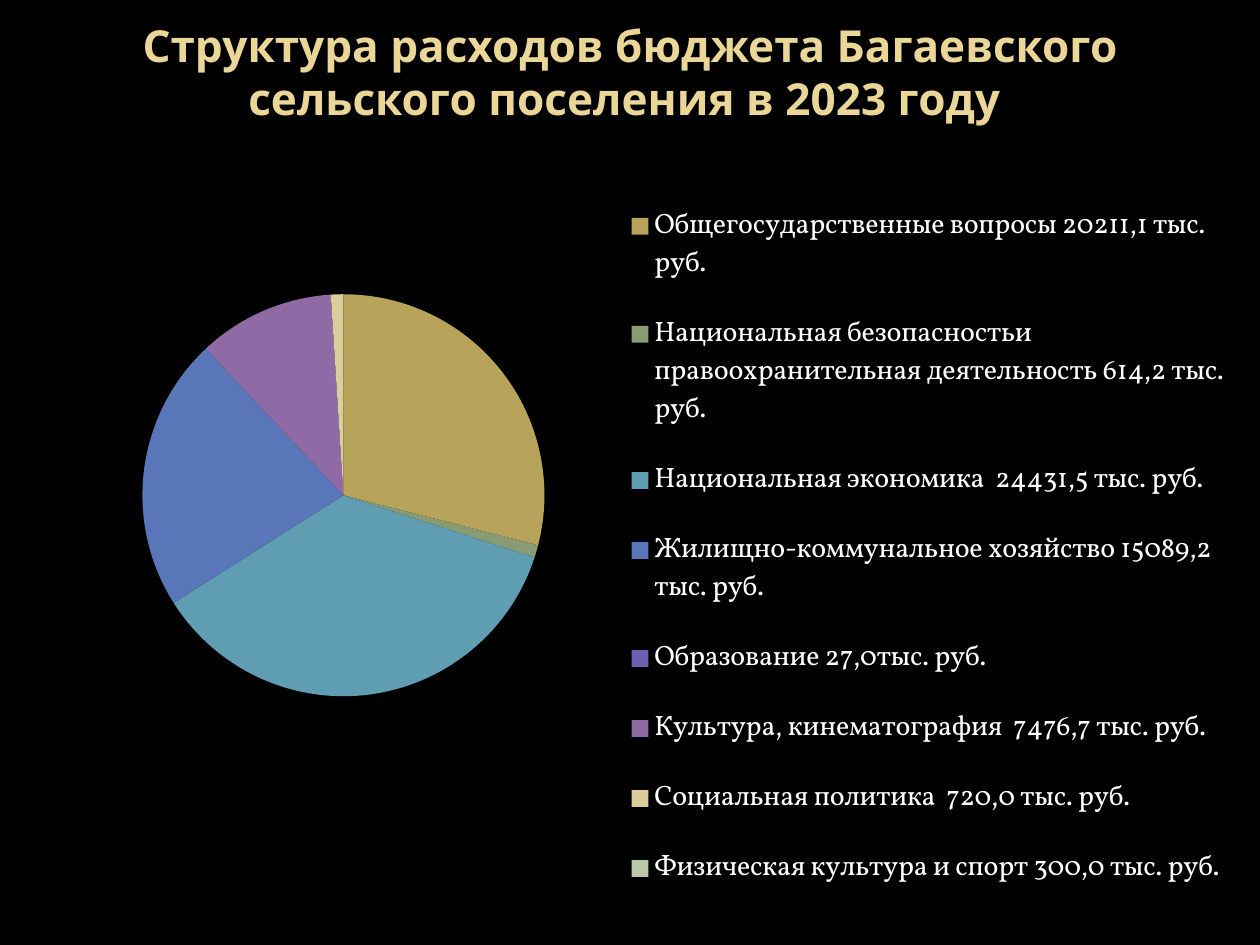
import pptx
import pptx.chart.data
import pptx.dml.color
import pptx.enum.chart
import pptx.enum.text
import pptx.oxml
import pptx.oxml.ns
import pptx.util
from pptx.util import Inches

TITLE = "Структура расходов бюджета Багаевского сельского поселения в 2023 году "
# Legend entry, share of spending in percent, slice colour
EXPENSES = [
    ("Общегосударственные вопросы 20211,1 тыс. руб.", 29, "B8A35A"),
    ("Национальная безопасностьи правоохранительная деятельность 614,2 тыс. руб.", 1, "8A9B74"),
    ("Национальная экономика  24431,5 тыс. руб.", 36, "5E9DB2"),
    ("Жилищно-коммунальное хозяйство 15089,2 тыс. руб.", 22, "5976B8"),
    ("Образование 27,0тыс. руб.", 0, "6F5EB2"),
    ("Культура, кинематография  7476,7 тыс. руб.", 11, "906AA5"),
    ("Социальная политика  720,0 тыс. руб.", 1, "DCCD9C"),
    ("Физическая культура и спорт 300,0 тыс. руб.", 0, "BAC7AB"),
]


def color(value):
    return pptx.dml.color.RGBColor.from_string(value)


def set_solid_fill(fill, value):
    fill.solid()
    fill.fore_color.rgb = color(value)


def set_attributes(target, values):
    for name, value in values.items():
        setattr(target, name, value)


def format_font(font, value, **values):
    set_attributes(font, values)
    font.color.rgb = color(value)


def add_title(slide):
    shape = slide.shapes.add_textbox(Inches(0.5), Inches(0.13), Inches(9), Inches(0.87))
    set_attributes(shape.text_frame, {
        "word_wrap": True,
        "vertical_anchor": pptx.enum.text.MSO_ANCHOR.MIDDLE,
    })
    paragraph = shape.text_frame.paragraphs[0]
    paragraph.alignment = pptx.enum.text.PP_ALIGN.CENTER
    run = paragraph.add_run()
    run.text = TITLE
    format_font(run.font, "EAD696", name="Noto Sans", size=pptx.util.Pt(25.2), bold=True)


def make_layout(left, top, width, height, inner=False):
    """Return a c:layout element with a place given as fractions of the chart."""
    settings = [("layoutTarget", "inner")] if inner else []
    settings += [("xMode", "edge"), ("yMode", "edge"),
                 ("x", left), ("y", top), ("w", width), ("h", height)]
    children = "".join(f'<c:{tag} val="{value}"/>' for tag, value in settings)
    return pptx.oxml.parse_xml(
        f'<c:layout {pptx.oxml.ns.nsdecls("c")}>'
        f"<c:manualLayout>{children}</c:manualLayout></c:layout>")


def place_plot(chart, layout):
    plot_area = chart.element.find(".//" + pptx.oxml.ns.qn("c:plotArea"))
    for old_layout in plot_area.findall(pptx.oxml.ns.qn("c:layout")):
        plot_area.remove(old_layout)
    plot_area.insert(0, layout)


def place_legend(chart, layout):
    legend = chart.element.find(".//" + pptx.oxml.ns.qn("c:legend"))
    for old_layout in legend.findall(pptx.oxml.ns.qn("c:layout")):
        legend.remove(old_layout)
    legend.find(pptx.oxml.ns.qn("c:legendPos")).addnext(layout)


def add_expense_pie(slide):
    categories, shares, slice_colors = zip(*EXPENSES)
    data = pptx.chart.data.CategoryChartData()
    data.categories = categories
    data.add_series("Series 1", shares)
    chart = slide.shapes.add_chart(
        pptx.enum.chart.XL_CHART_TYPE.PIE,
        Inches(0.43), Inches(1.39), Inches(9.37), Inches(5.91), data).chart
    set_attributes(chart, {"has_title": False, "has_legend": True})
    set_attributes(chart.legend, {
        "position": pptx.enum.chart.XL_LEGEND_POSITION.RIGHT,
        "include_in_layout": False,
    })
    font_values = {"name": "Vollkorn", "size": pptx.util.Pt(16)}
    format_font(chart.font, "FFFFFF", **font_values)
    format_font(chart.legend.font, "FFFFFF", **font_values)

    plot = chart.plots[0]
    plot.vary_by_categories = True
    for index, slice_color in enumerate(slice_colors):
        point_format = plot.series[0].points[index].format
        set_solid_fill(point_format.fill, slice_color)
        point_format.line.fill.background()
    place_plot(chart, make_layout(0.04, 0.16, 0.41, 0.54, inner=True))
    place_legend(chart, make_layout(0.48, 0, 0.52, 1))


def main():
    presentation = pptx.Presentation()
    set_attributes(presentation, {"slide_width": Inches(10), "slide_height": Inches(7.5)})
    slide = presentation.slides.add_slide(presentation.slide_layouts[6])
    set_solid_fill(slide.background.fill, "000000")
    add_title(slide)
    add_expense_pie(slide)
    presentation.save("out.pptx")


if __name__ == "__main__":
    main()
